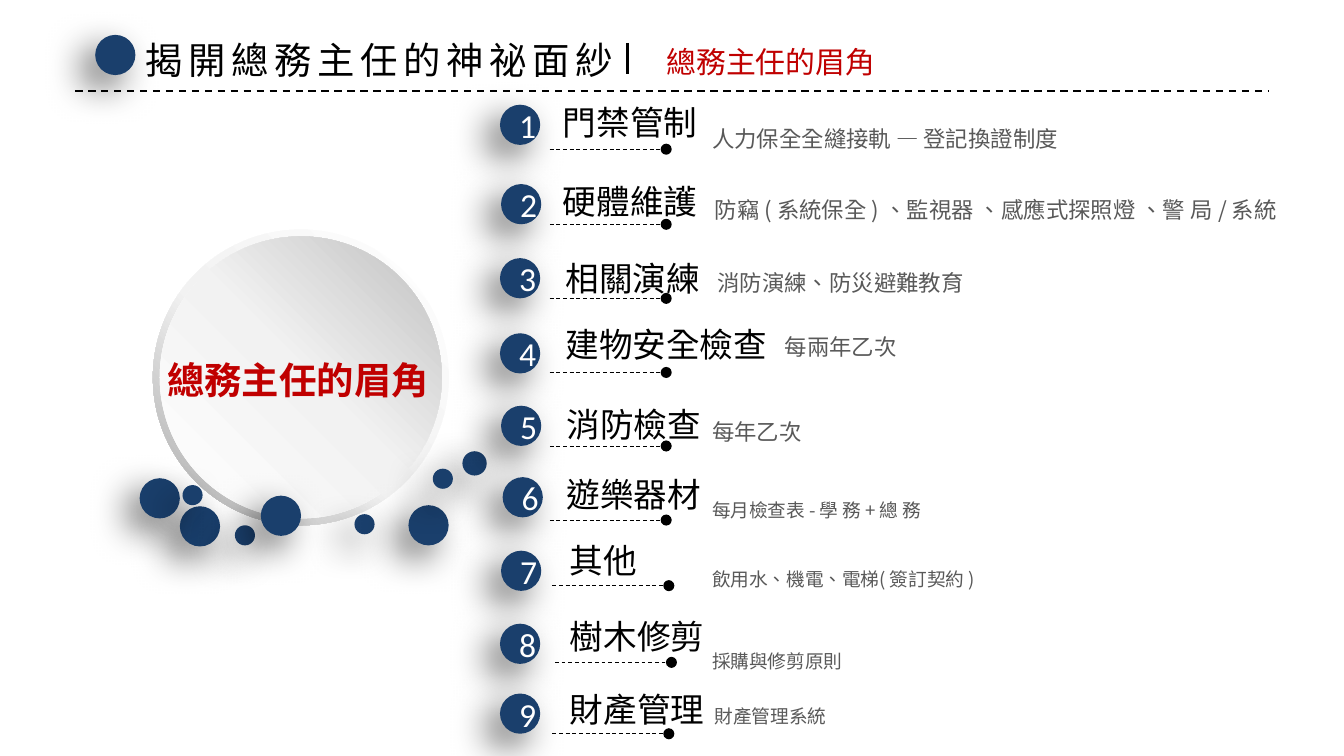
from lxml import etree
from pptx import Presentation
from pptx import util as u
from pptx.dml import color
from pptx.enum import dml, shapes, text
from pptx.oxml import ns

Cm, Pt = u.Cm, u.Pt
COLORS = {"navy": "1A3F6C", "red": "C00000", "gray": "595959", "black": "000000",
          "white": "FFFFFF", "pale": "F2F2F2", "silver": "BFBFBF", "steel": "A6A6A6"}
CJK = "Noto Sans CJK SC"
BADGE = 0.76

DOTS = [(0.76, 5.23, BADGE), (1.8, 5.59, 0.38), (2.29, 5.03, BADGE),
        (4.06, 5.38, 0.38), (0, 4.7, BADGE), (0.81, 4.83, 0.38),
        (5.08, 5.21, BADGE), (6.1, 4.19, 0.46), (5.54, 4.52, 0.38)]

# box, heading and its offset, rule offset, note, its size and offset
ROWS = [
    ((9.45, 1.98, 13.61), "門禁管制", (0.94, -0.18), (0.94, 0.84),
     "人力保全全縫接軌 — 登記換證制度", 12, (4.01, 0.43)),
    ((9.47, 3.48, 15.93), "硬體維護", (0.92, -0.18), (0.92, 0.76),
     "防竊 ( 系統保全 ) 、監視器 、感應式探照燈 、警 局 / 系統", 12, (4.04, 0.28)),
    ((9.45, 4.88, 13.71), "相關演練", (0.99, -0.13), (0.94, 0.76),
     "消防演練、防災避難教育", 12, (4.11, 0.25)),
    ((9.45, 6.3, 14.98), "建物安全檢查", (0.99, -0.31), (0.94, 0.74),
     "每兩年乙次", 12, (5.38, 0.05)),
    ((9.47, 7.67, 13.59), "消防檢查", (0.99, -0.15), (0.92, 0.76),
     "每年乙次", 12, (3.99, 0.28)),
    ((9.5, 9.02, 13.56), "遊樂器材", (0.96, -0.18), (0.89, 0.81),
     "每月檢查表 - 學 務 + 總 務 ", 10, (3.96, 0.38)),
    ((9.47, 10.41, 13.59), "其他", (1.05, -0.33), (0.97, 0.66),
     "飲用水、機電、電梯( 簽訂契約 )", 10, (3.99, 0.28)),
    ((9.45, 11.79, 13.61), "樹木修剪", (1.07, -0.28), (1.04, 0.73),
     "採購與修剪原則", 10, (4.01, 0.45)),
    ((9.45, 13.11, 13.66), "財產管理", (1.07, -0.21), (0.99, 0.76),
     "財產管理系統", 10, (4.06, 0.17)),
]


def rgb(name):
    return color.RGBColor.from_string(COLORS[name])


def add_element(parent, tag, **attributes):
    return etree.SubElement(parent, ns.qn(tag), attributes)


def add_run(paragraph, words, size, fill, font=CJK, bold=False, spacing=0):
    run = paragraph.add_run()
    run.text = words
    run.font.size, run.font.bold, run.font.name = Pt(size), bold, font
    run.font.color.rgb = rgb(fill)
    properties = run._r.get_or_add_rPr()
    properties.set("lang", "zh-TW")
    if spacing:
        properties.set("spc", str(spacing * 100))
    add_element(properties, "a:ea", typeface=CJK)


def add_text(slide, left, top, width, height, words, size, fill, align=text.PP_ALIGN.LEFT,
             wrap=False, leading=None, **style):
    shape = slide.shapes.add_textbox(Cm(left), Cm(top), Cm(width), Cm(height))
    frame = shape.text_frame
    frame.word_wrap = wrap
    frame.auto_size = text.MSO_AUTO_SIZE.SHAPE_TO_FIT_TEXT
    if wrap:
        frame.margin_left = frame.margin_right = frame.margin_top = frame.margin_bottom = 0
    paragraph = frame.paragraphs[0]
    paragraph.alignment = align
    if leading:
        paragraph.line_spacing = Pt(leading)
    add_run(paragraph, words, size, fill, **style)


def add_line(slide, left, top, right, bottom, width, dashed=True, dot=False):
    line = slide.shapes.add_connector(shapes.MSO_CONNECTOR.STRAIGHT,
                                      Cm(left), Cm(top), Cm(right), Cm(bottom))
    line.line.color.rgb = rgb("black")
    line.line.width = Pt(width)
    if dashed:
        line.line.dash_style = dml.MSO_LINE.DASH
    if dot:
        add_element(line.line._get_or_add_ln(), "a:tailEnd", type="oval")
    add_element(line._element.spPr, "a:effectLst")


def add_round(container, left, top, size, kind=shapes.MSO_SHAPE.OVAL):
    shape = container.shapes.add_shape(kind, Cm(left), Cm(top), Cm(size), Cm(size))
    shape.shadow.inherit = False
    shape.line.fill.background()
    return shape


def add_dot(slide, left, top, size=BADGE):
    shape = add_round(slide, left, top, size)
    shape.fill.solid()
    shape.fill.fore_color.rgb = rgb("navy")
    effects = shape._element.spPr.find(ns.qn("a:effectLst"))
    shadow = add_element(effects, "a:outerShdw", blurRad=str(Pt(20)), dist=str(Pt(10)),
                         dir=str(135 * 60000), algn="tr", rotWithShape="0")
    shade = add_element(shadow, "a:srgbClr", val=COLORS["black"])
    add_element(shade, "a:alpha", val="60000")
    return shape


def set_gradient(shape, stops, angle):
    shape.fill.gradient()
    gradient = shape._element.spPr.find(ns.qn("a:gradFill"))
    for child in list(gradient):
        gradient.remove(child)
    stop_list = add_element(gradient, "a:gsLst")
    for position, name in stops:
        stop = add_element(stop_list, "a:gs", pos=str(position * 1000))
        add_element(stop, "a:srgbClr", val=COLORS[name])
    add_element(gradient, "a:lin", ang=str(angle * 60000), scaled="0")


def add_header(slide, left, top, width):
    add_line(slide, left, top + 1.14, left + width, top + 1.14, 1)
    add_dot(slide, left + 0.38, top + 0.08)
    add_text(slide, left + 1.09, top, 9.53, 1.12, "揭開總務主任的神祕面紗", 20, "black", spacing=3)
    add_line(slide, left + 10.44, top + 0.23, left + 10.44, top + 0.81, 1.5, dashed=False)
    add_text(slide, left + 10.9, top + 0.13, 4.5, 0.94, "總務主任的眉角", 16, "red",
             align=text.PP_ALIGN.CENTER, font="Arial")


def add_hub(slide, left, top, size):
    group = slide.shapes.add_group_shape()
    ring = add_round(group, left + 0.25, top, size, shapes.MSO_SHAPE.DONUT)
    ring.adjustments[0] = 0.05
    set_gradient(ring, [(0, "white"), (55, "pale"), (100, "steel")], 135)
    disc = add_round(group, left + 0.38, top + 0.13, size - 0.26)
    set_gradient(disc, [(0, "white"), (51, "pale"), (100, "silver")], 315)
    for dx, dy, diameter in DOTS:
        add_dot(slide, left + dx, top + dy, diameter)
    add_text(slide, left + 0.43, top + 2.41, 5.13, 0.86, "總務主任的眉角", 20, "red",
             align=text.PP_ALIGN.CENTER, wrap=True, bold=True)


def add_row(slide, box, number, heading, heading_at, rule_at, note, note_size, note_at):
    left, top, width = box
    badge = add_dot(slide, left, top)
    badge.text_frame.vertical_anchor = text.MSO_ANCHOR.MIDDLE
    paragraph = badge.text_frame.paragraphs[0]
    paragraph.alignment = text.PP_ALIGN.CENTER
    add_run(paragraph, str(number), 18, "white", font="Calibri")
    rule_left, rule_top = left + rule_at[0], top + rule_at[1]
    add_line(slide, rule_left, rule_top, rule_left + 2.2, rule_top, 0.5, dot=True)
    add_text(slide, left + heading_at[0], top + heading_at[1], 0.5 + 0.64 * len(heading), 1.02,
             heading, 18, "black", font="Calibri")
    add_text(slide, left + note_at[0], top + note_at[1], width - note_at[0], 0.45, note,
             note_size, "gray", align=text.PP_ALIGN.JUSTIFY, wrap=True, leading=13)


def main():
    presentation = Presentation()
    presentation.slide_width, presentation.slide_height = Cm(25.4), Cm(14.29)
    slide = presentation.slides.add_slide(presentation.slide_layouts[6])
    add_hub(slide, 2.64, 4.34, 5.59)
    add_header(slide, 1.42, 0.58, 22.56)
    for number, (box, *parts) in enumerate(ROWS, 1):
        add_row(slide, box, number, *parts)
    presentation.save("out.pptx")


if __name__ == "__main__":
    main()
